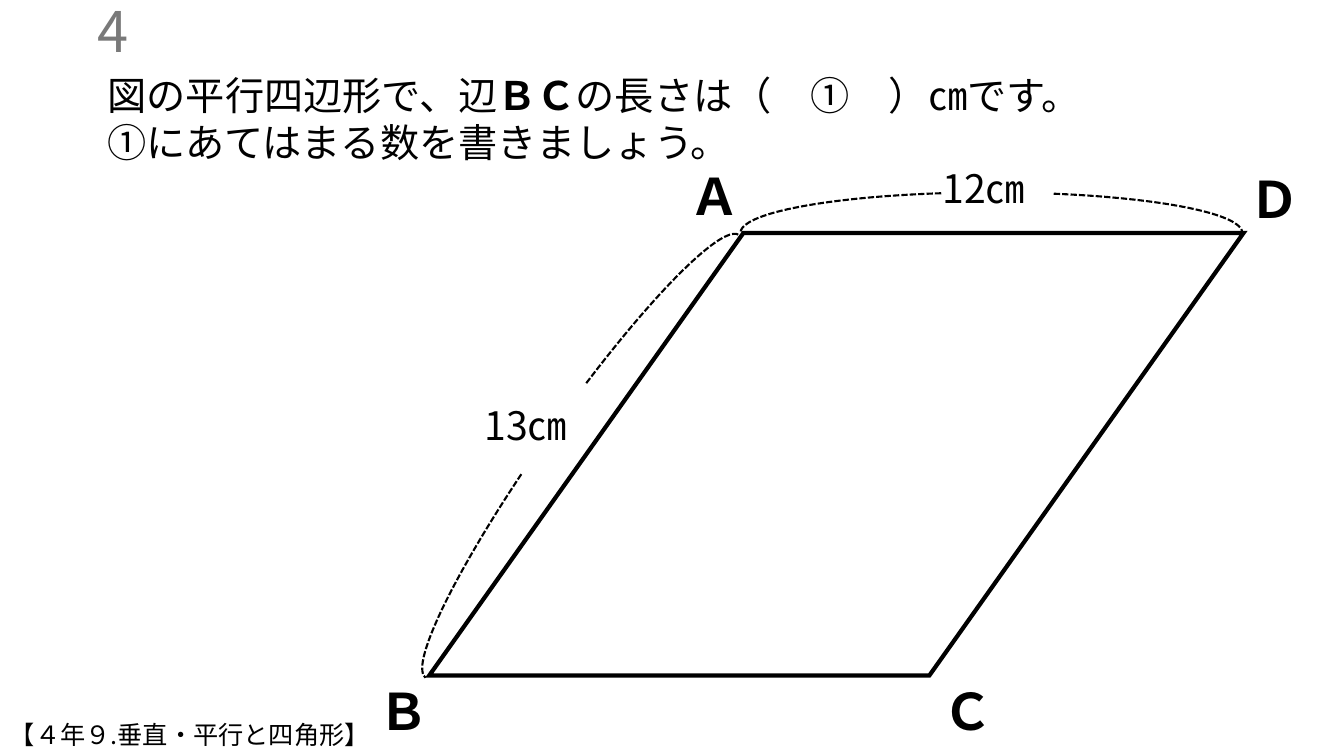
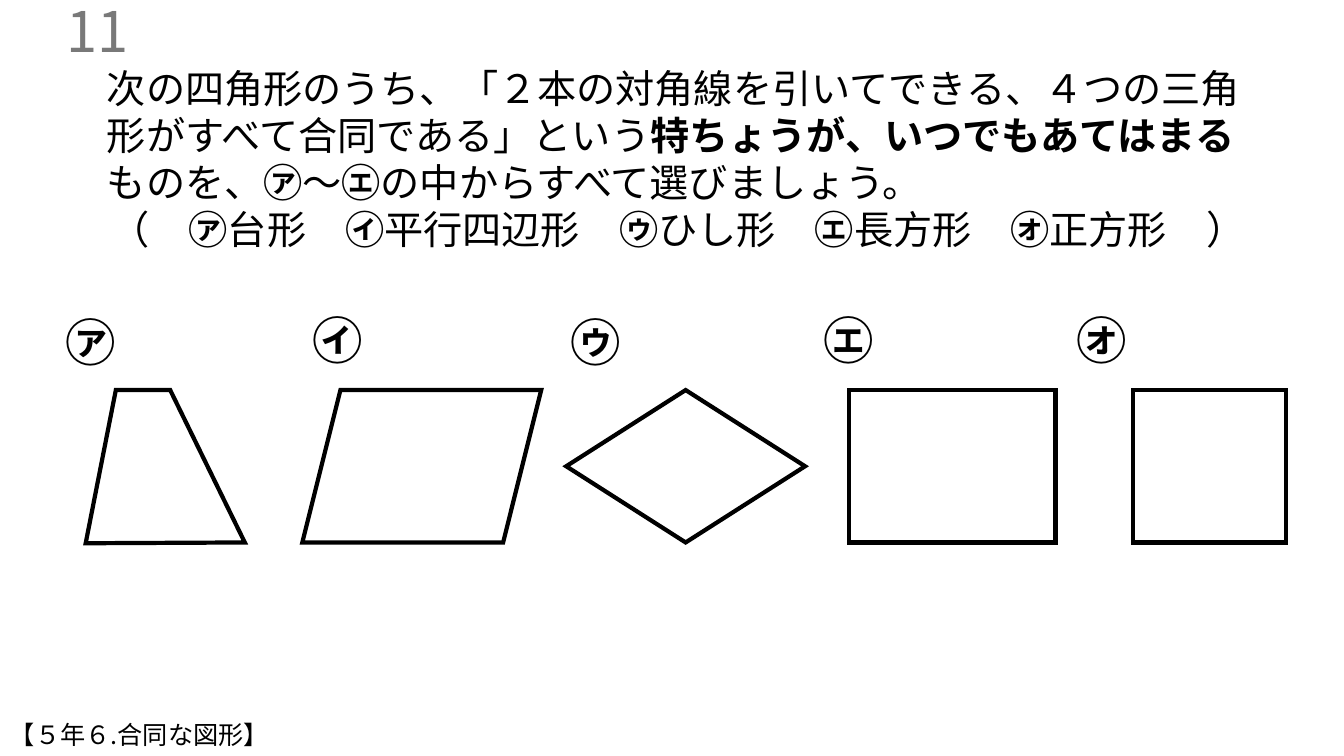
from lxml import etree
from pptx import Presentation
from pptx.dml.color import RGBColor
from pptx.enum import dml, shapes, text
from pptx.oxml import ns
from pptx.util import Cm, Pt

BLACK = RGBColor(0x00, 0x00, 0x00)
WHITE = RGBColor(0xFF, 0xFF, 0xFF)
GRAY = RGBColor(0x79, 0x79, 0x79)
FONT = "Noto Sans CJK JP"
SHAPE = shapes.MSO_SHAPE
ALIGN = text.PP_ALIGN


class Deck:
    def __init__(self):
        self.prs = Presentation()
        self.prs.slide_width = Cm(33.87)
        self.prs.slide_height = Cm(19.05)
        self.s = None

    def new_slide(self, number, unit, paragraphs, box):
        self.s = self.prs.slides.add_slide(self.prs.slide_layouts[5])
        self.title(paragraphs, box)
        self.number(number)
        self.text(unit, 0, 18.01, 19.02, 1.02, 18)

    def title(self, paragraphs, box):
        sp = self.s.shapes.title
        sp.left, sp.top, sp.width, sp.height = (Cm(v) for v in box)
        tf = sp.text_frame
        self.frame(tf)
        for i, (content, align) in enumerate(paragraphs):
            p = tf.add_paragraph() if i else tf.paragraphs[0]
            p.alignment = align
            for j, part in enumerate(content.split("*")):
                r = p.add_run()
                r.text = part
                self.style(r, 28, bold=j % 2 == 1)

    def number(self, number):
        tf = self.text(number, 0, 0.25, 3.48, 1.02, 40, color=GRAY)
        tf.auto_size = text.MSO_AUTO_SIZE.NONE
        tf.vertical_anchor = text.MSO_ANCHOR.MIDDLE
        tf.paragraphs[0].alignment = ALIGN.RIGHT

    def frame(self, tf):
        tf.word_wrap = True
        tf.auto_size = text.MSO_AUTO_SIZE.SHAPE_TO_FIT_TEXT
        tf.vertical_anchor = text.MSO_ANCHOR.TOP

    def style(self, r, size, bold=False, color=BLACK):
        r.font.size = Pt(size)
        r.font.bold = bold
        r.font.color.rgb = color
        r.font.name = FONT
        rpr = r._r.get_or_add_rPr()
        etree.SubElement(rpr, ns.qn("a:ea")).set("typeface", FONT)

    def text(self, content, x, y, w, h, size, bold=False, color=BLACK):
        tf = self.s.shapes.add_textbox(Cm(x), Cm(y), Cm(w), Cm(h)).text_frame
        self.frame(tf)
        tf.text = content
        self.style(tf.paragraphs[0].runs[0], size, bold, color)
        return tf

    def label(self, content, x, y):
        self.text(content, x, y, 1.63, 1.8, 36, bold=True)

    def length(self, content, x, y):
        self.text(content, x, y, 3.48, 1.45, 28)

    def outline(self, sp, width=3, dash=None, fill=None):
        sp.shadow.inherit = False
        if fill is None:
            sp.fill.background()
        else:
            sp.fill.solid()
            sp.fill.fore_color.rgb = fill
        sp.line.color.rgb = BLACK
        sp.line.width = Pt(width)
        if dash is not None:
            sp.line.dash_style = dash
        miter = etree.SubElement(sp.line._get_or_add_ln(), ns.qn("a:miter"))
        miter.set("lim", "800000")

    def shape(self, kind, x, y, w, h, adj=None, **line):
        sp = self.s.shapes.add_shape(kind, Cm(x), Cm(y), Cm(w), Cm(h))
        if adj is not None:
            sp.adjustments[0] = adj
        self.outline(sp, **line)
        return sp

    def polygon(self, points):
        pts = [(Cm(x), Cm(y)) for x, y in points]
        builder = self.s.shapes.build_freeform(*pts[0])
        builder.add_line_segments(pts[1:], close=True)
        self.outline(builder.convert_to_shape())

    def dimension(self, x, y, w, h, rotation=0):
        for start, flipped in ((196.71, False), (193, True)):
            sp = self.shape(SHAPE.ARC, x, y, w, h, start, width=1.5,
                            dash=dml.MSO_LINE.SQUARE_DOT)
            sp.adjustments[1] = 0
            sp.rotation = rotation
            if flipped:
                sp._element.spPr.xfrm.set("flipH", "1")


def parallelogram_slide(deck):
    deck.new_slide("4", "【４年９.垂直・平行と四角形】", [
        ("図の平行四辺形で、辺*ＢＣ*の長さは（　①　）㎝です。", ALIGN.LEFT),
        ("①にあてはまる数を書きましょう。", ALIGN.LEFT),
    ], (2.46, 1.68, 28.24, 2.64))
    deck.dimension(18.66, 4.85, 12.65, 2.04)
    deck.dimension(7.84, 10.49, 13.67, 2.02, rotation=305.3)
    deck.length("12㎝", 23.5, 4.01)
    deck.length("13㎝", 11.96, 9.98)
    deck.shape(SHAPE.PARALLELOGRAM, 10.82, 5.87, 20.52, 11.15, 0.71, fill=WHITE)
    for name, x, y in (("Ａ", 17.12, 4.04), ("Ｂ", 9.3, 17.02),
                       ("Ｃ", 23.5, 17.02), ("Ｄ", 31.24, 4.11)):
        deck.label(name, x, y)


def congruence_slide(deck):
    deck.new_slide("11", "【５年６.合同な図形】", [
        ("次の四角形のうち、「２本の対角線を引いてできる、４つの三角形がすべて合同である」"
         "という*特ちょうが、いつでもあてはまる*ものを、*㋐*～*㋓*の中からすべて選びましょう。",
         ALIGN.LEFT),
        ("（　*㋐*台形　*㋑*平行四辺形　*㋒*ひし形　*㋓*長方形　*㋔*正方形　）",
         ALIGN.CENTER),
    ], (2.44, 1.5, 29.29, 5.05))
    for kind, x, w in ((SHAPE.PARALLELOGRAM, 7.62, 6.02),
                       (SHAPE.DIAMOND, 14.27, 6.02),
                       (SHAPE.RECTANGLE, 21.39, 5.21),
                       (SHAPE.RECTANGLE, 28.55, 3.86)):
        deck.shape(kind, x, 9.83, w, 3.84)
    deck.polygon([(2.92, 9.83), (2.16, 13.69), (6.17, 13.67), (4.29, 9.83)])
    for name, x, y in (("㋐", 1.4, 7.72), ("㋑", 7.62, 7.67), ("㋒", 14.12, 7.72),
                       ("㋓", 20.5, 7.67), ("㋔", 26.87, 7.67)):
        deck.label(name, x, y)


def main():
    deck = Deck()
    parallelogram_slide(deck)
    congruence_slide(deck)
    deck.prs.save("out.pptx")


if __name__ == "__main__":
    main()
